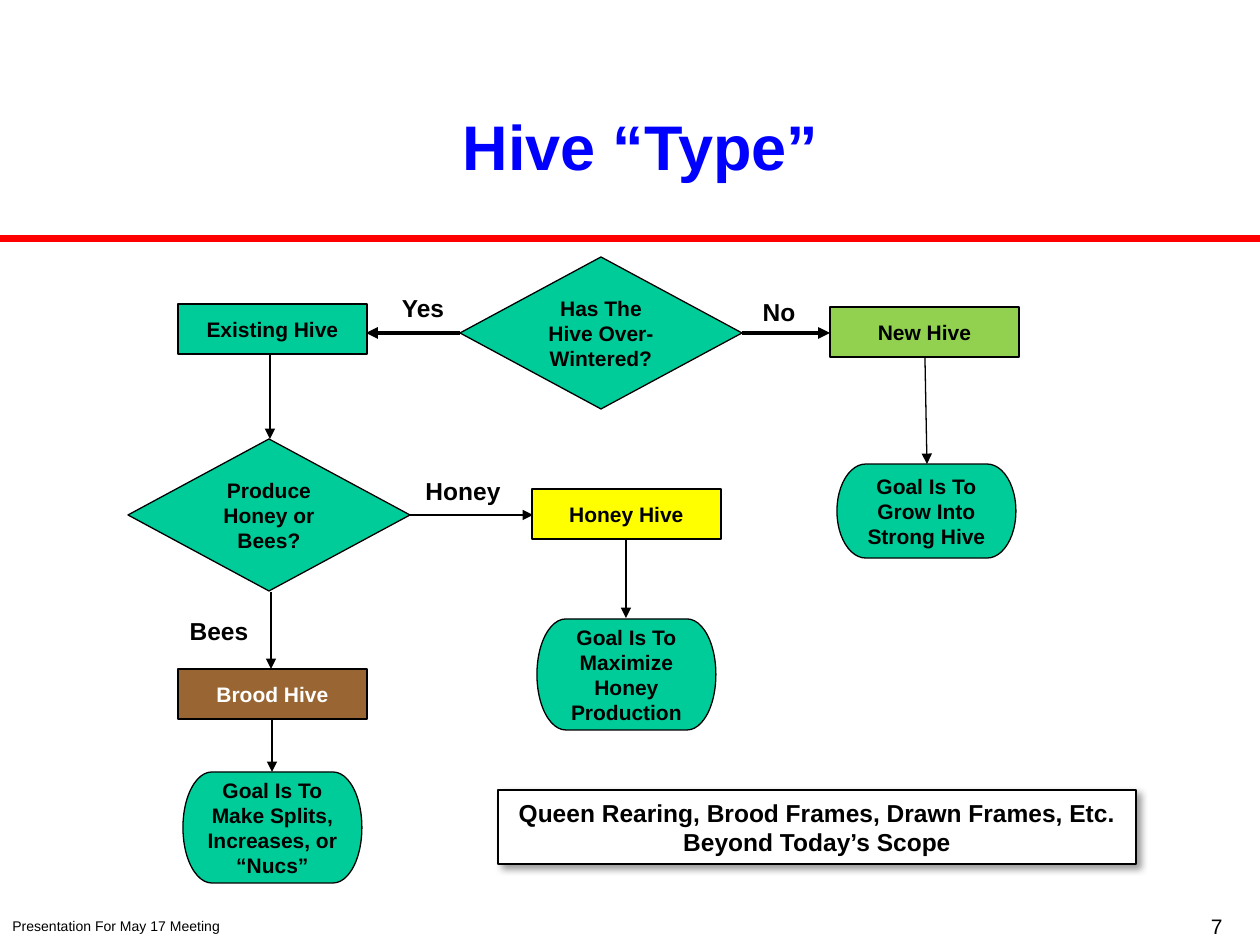
from dataclasses import dataclass

from lxml import etree
from pptx import Presentation
from pptx import util as u
from pptx.dml.color import RGBColor
from pptx.enum import shapes, text
from pptx.oxml.ns import qn

PX = u.Inches(1) / 126
KIND = shapes.MSO_SHAPE
LEFT, CENTER, RIGHT = text.PP_ALIGN.LEFT, text.PP_ALIGN.CENTER, text.PP_ALIGN.RIGHT


@dataclass(frozen=True)
class Theme:
    """Colours, font and type sizes of the slide."""
    font: str = "Arial"
    ink: str = "000000"
    paper: str = "FFFFFF"
    title: str = "0000FF"
    rule: str = "FF0000"
    green: str = "00CC99"
    lime: str = "92D050"
    yellow: str = "FFFF00"
    brown: str = "996633"
    title_size: int = 36
    label_size: int = 14
    node_size: int = 12
    footer_size: int = 8
    thin: float = 0.75
    thick: float = 2.25
    rule_width: int = 4


THEME = Theme()


def emu(*lengths):
    """Turn px lengths into EMU."""
    return [round(length * PX) for length in lengths]


def apply_format(target, values):
    """Set each attribute named in values on the target."""
    for name, value in values.items():
        setattr(target, name, value)


def write_text(shape, lines, size, color=THEME.ink, bold=True, align=CENTER,
               anchor=text.MSO_ANCHOR.MIDDLE, spacing=None):
    """Fill a shape with one paragraph per line."""
    frame = shape.text_frame
    apply_format(frame, {"word_wrap": True, "vertical_anchor": anchor})
    frame.text = "\n".join(lines)
    for paragraph in frame.paragraphs:
        apply_format(paragraph, {"alignment": align, "line_spacing": spacing})
        apply_format(paragraph.font, {"name": THEME.font, "size": u.Pt(size), "bold": bold})
        paragraph.font.color.rgb = RGBColor.from_string(color)


def add_label(parent, box, lines, size, **style):
    """Add a text box to a slide's or group's shapes."""
    write_text(parent.add_textbox(*emu(*box)), lines, size, **style)


def add_block(parent, kind, box, fill):
    """Add an outlined preset shape without shadow."""
    shape = parent.add_shape(kind, *emu(*box))
    shape.shadow.inherit = False
    shape.fill.solid()
    shape.fill.fore_color.rgb = RGBColor.from_string(fill)
    shape.line.color.rgb = RGBColor.from_string(THEME.ink)
    shape.line.width = u.Pt(THEME.thin)
    return shape


def add_line(parent, ends, color, width, arrow=True):
    """Add a straight line, by default with an arrowhead at its end."""
    line = parent.add_connector(shapes.MSO_CONNECTOR.STRAIGHT, *emu(*ends))
    line.line.color.rgb = RGBColor.from_string(color)
    line.line.width = u.Pt(width)
    properties = line._element.spPr
    if arrow:
        etree.SubElement(properties.find(qn("a:ln")), qn("a:tailEnd"), type="triangle")
    etree.SubElement(properties, qn("a:effectLst"))


def add_header(slide, left, top, width, height):
    """Place the title above a full-width red rule."""
    add_label(slide.shapes, (left + 267, top + 98, 747, 118), ["Hive “Type”"],
              THEME.title_size, color=THEME.title, spacing=u.Pt(30))
    bottom = top + height
    add_line(slide.shapes, (left, bottom, left + width, bottom),
             THEME.rule, THEME.rule_width, arrow=False)


def add_flowchart(slide, left, top):
    """Place the decision flow from its top left corner."""
    decision = (KIND.FLOWCHART_DECISION, 282, 152)
    process = (KIND.FLOWCHART_PROCESS, 189, 50)
    short_goal = (KIND.FLOWCHART_TERMINATOR, 179, 94)
    tall_goal = (KIND.FLOWCHART_TERMINATOR, 179, 111)
    nodes = [
        (decision, 332, 0, "Has The Hive Over-Wintered?", THEME.green, THEME.ink),
        (process, 50, 47, "Existing Hive", THEME.green, THEME.ink),
        (process, 702, 50, "New Hive", THEME.lime, THEME.ink),
        (short_goal, 709, 207, "Goal Is To Grow Into Strong Hive", THEME.green, THEME.ink),
        (decision, 0, 182, "Produce Honey or Bees?", THEME.green, THEME.ink),
        (process, 404, 232, "Honey Hive", THEME.yellow, THEME.ink),
        (tall_goal, 409, 362, "Goal Is To Maximize Honey Production", THEME.green, THEME.ink),
        (process, 50, 412, "Brood Hive", THEME.brown, THEME.paper),
        (tall_goal, 55, 515, "Goal Is To Make Splits, Increases, or “Nucs”",
         THEME.green, THEME.ink),
    ]
    arrows = [
        (332, 76, 238, 76, THEME.thick),
        (614, 76, 702, 76, THEME.thick),
        (797, 101, 799, 207, THEME.thin),
        (142, 98, 142, 182, THEME.thin),
        (282, 258, 405, 258, THEME.thin),
        (498, 283, 498, 361, THEME.thin),
        (143, 335, 143, 412, THEME.thin),
        (144, 462, 144, 515, THEME.thin),
    ]
    labels = [(258, 30, 74, "Yes"), (614, 34, 74, "No"),
              (276, 213, 118, "Honey"), (48, 353, 86, "Bees")]

    for (kind, width, height), x, y, wording, fill, ink in nodes:
        shape = add_block(slide.shapes, kind, (left + x, top + y, width, height), fill)
        write_text(shape, [wording], THEME.node_size, color=ink)
    for x1, y1, x2, y2, weight in arrows:
        add_line(slide.shapes, (left + x1, top + y1, left + x2, top + y2), THEME.ink, weight)
    for x, y, width, wording in labels:
        add_label(slide.shapes, (left + x, top + y, width, 43), [wording],
                  THEME.label_size, anchor=text.MSO_ANCHOR.TOP)


def add_scope_note(slide, left, top, width, height):
    """Place the shadowed note about what is out of scope."""
    group = slide.shapes.add_group_shape().shapes
    box = (left, top, width, height)
    panel = add_block(group, KIND.RECTANGLE, box, THEME.paper)
    effects = panel._element.spPr.find(qn("a:effectLst"))
    shadow = etree.SubElement(effects, qn("a:outerShdw"), blurRad=str(u.Pt(4)),
                              dist=str(u.Pt(3)), dir="2700000", algn="tl", rotWithShape="0")
    color = etree.SubElement(shadow, qn("a:srgbClr"), val=THEME.ink)
    etree.SubElement(color, qn("a:alpha"), val="40000")
    add_label(group, (left, top + 1, width, height - 2),
              ["Queen Rearing, Brood Frames, Drawn Frames, Etc.", "Beyond Today’s Scope"],
              THEME.label_size)


def add_footer(slide, left, top, width):
    """Place the meeting name at the left and the page number at the right."""
    style = {"bold": False, "anchor": text.MSO_ANCHOR.TOP}
    add_label(slide.shapes, (left, top + 4, 350, 30), ["Presentation For May 17 Meeting"],
              THEME.footer_size, align=LEFT, **style)
    add_label(slide.shapes, (left + width - 447, top, 447, 38), ["7"],
              THEME.node_size, align=RIGHT, **style)


def main():
    """Build and save the slide."""
    presentation = Presentation()
    width, height = emu(1260, 945)
    apply_format(presentation, {"slide_width": width, "slide_height": height})
    slide = presentation.slides.add_slide(presentation.slide_layouts[6])
    add_header(slide, 0, 0, 1260, 239)
    add_flowchart(slide, 128, 257)
    add_scope_note(slide, 498, 790, 638, 74)
    add_footer(slide, 0, 907, 1235)
    presentation.save("out.pptx")


if __name__ == "__main__":
    main()
